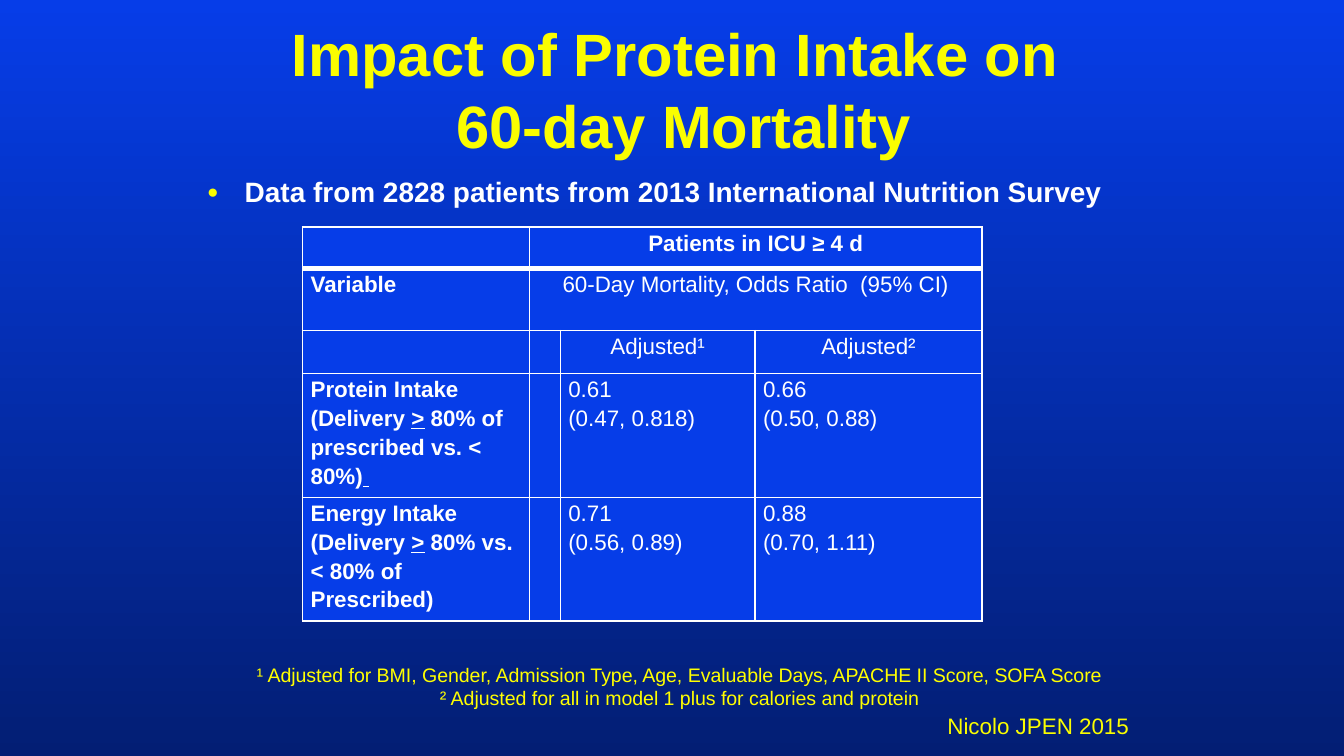
from lxml import etree
from pptx import Presentation
from pptx.dml.color import RGBColor
from pptx.enum.text import MSO_ANCHOR, MSO_AUTO_SIZE, PP_ALIGN
from pptx.oxml.ns import qn
from pptx.util import Cm, Pt

LEFT, CENTER, RIGHT = PP_ALIGN.LEFT, PP_ALIGN.CENTER, PP_ALIGN.RIGHT
MIDDLE, TOP = MSO_ANCHOR.MIDDLE, MSO_ANCHOR.TOP
FIXED, GROW = MSO_AUTO_SIZE.NONE, MSO_AUTO_SIZE.SHAPE_TO_FIT_TEXT
COLORS = {"blue": "063DE8", "navy": "031E74", "gold": "FAFD00",
          "yellow": "FFFF00", "white": "FFFFFF"}
FONT = "Arial"
COLUMNS = [4.29, 0.58, 3.68, 4.29]
ROWS = [0.79, 1.17, 0.81, 2.34, 2.34]
RESULTS = [
    (["Protein Intake (Delivery ", ">", " 80% of prescribed vs. < 80%)", " "],
     ["0.61", "(0.47, 0.818)"], ["0.66", "(0.50, 0.88)"]),
    (["Energy Intake (Delivery ", ">", " 80% vs. < 80% of Prescribed)"],
     ["0.71", "(0.56, 0.89)"], ["0.88", "(0.70, 1.11)"]),
]


def rgb(name):
    """Return a named colour."""
    return RGBColor.from_string(COLORS[name])


def add_span(para, text, size, color, bold=False, underline=None):
    """Add one formatted run."""
    span = para.add_run()
    span.text = text
    font = span.font
    font.name, font.size, font.bold, font.underline = FONT, Pt(size), bold, underline
    font.color.rgb = rgb(color)


def next_para(frame, index):
    """Return the first paragraph, or a new one after it."""
    return frame.paragraphs[0] if index == 0 else frame.add_paragraph()


def place(box, left, top, width, height):
    """Position a shape, in centimetres."""
    box.left, box.top, box.width, box.height = map(Cm, (left, top, width, height))


def paint_background(page):
    """Fill the page with a vertical gradient."""
    fill = page.background.fill
    fill.gradient()
    fill.gradient_angle = 270
    for stop, color, position in zip(fill.gradient_stops, ("blue", "navy"), (0, 1)):
        stop.color.rgb = rgb(color)
        stop.position = position


def fill_title(page):
    """Write the two-line title."""
    title = page.shapes.title
    place(title, 4.11, 0.48, 17.63, 2.39)
    frame = title.text_frame
    frame.auto_size, frame.vertical_anchor = FIXED, MIDDLE
    para = frame.paragraphs[0]
    para.alignment = CENTER
    add_span(para, "Impact of Protein Intake on ", 32, "gold", True)
    para.add_line_break()
    add_span(para, "60-day Mortality", 32, "gold", True)


def fill_body(page):
    """Write the bulleted data source."""
    body = page.placeholders[1]
    place(body, 3.66, 3.18, 18.57, 8.59)
    frame = body.text_frame
    frame.auto_size, frame.vertical_anchor = FIXED, TOP
    para = frame.paragraphs[0]
    para.space_before = Pt(3)
    add_span(para, "Data from 2828 patients from 2013 International Nutrition Survey",
             15, "white", True)
    props = para._p.get_or_add_pPr()
    props.set("marL", str(Cm(0.71)))
    props.set("indent", str(-Cm(0.71)))
    tint = etree.SubElement(props, qn("a:buClr"))
    etree.SubElement(tint, qn("a:srgbClr"), val=COLORS["gold"])
    etree.SubElement(props, qn("a:buSzPct"), val="68000")
    etree.SubElement(props, qn("a:buFont"), typeface=FONT)
    etree.SubElement(props, qn("a:buChar"), char="●")


def format_cell(cell, row):
    """Set margins, borders and fill of a cell."""
    cell.margin_left = cell.margin_right = Cm(0.15)
    cell.margin_top = cell.margin_bottom = 0
    widths = {"L": 1, "R": 1, "T": 3 if row == 1 else 1, "B": 3 if row == 0 else 1}
    props = cell._tc.get_or_add_tcPr()
    for side, width in widths.items():
        line = etree.SubElement(props, qn(f"a:ln{side}"), w=str(Pt(width)))
        solid = etree.SubElement(line, qn("a:solidFill"))
        etree.SubElement(solid, qn("a:srgbClr"), val=COLORS["white"])
    cell.fill.solid()
    cell.fill.fore_color.rgb = rgb("blue")


def write_cell(cell, lines, align=LEFT, bold=False):
    """Write paragraphs, each a list of runs with every second one underlined."""
    for index, spans in enumerate(lines):
        para = next_para(cell.text_frame, index)
        para.alignment, para.line_spacing = align, 1.15
        for order, text in enumerate(spans):
            add_span(para, text, 12, "white", bold, order % 2 == 1)


def add_odds_table(page):
    """Build the table of odds ratios."""
    holder = page.shapes.add_table(len(ROWS), len(COLUMNS), Cm(5.72), Cm(4.29),
                                   Cm(sum(COLUMNS)), Cm(sum(ROWS)))
    table = holder.table
    for column, width in zip(table.columns, COLUMNS):
        column.width = Cm(width)
    for index, (row, height) in enumerate(zip(table.rows, ROWS)):
        row.height = Cm(height)
        for cell in row.cells:
            format_cell(cell, index)
    for row in (0, 1):
        table.cell(row, 1).merge(table.cell(row, 3))
    write_cell(table.cell(0, 1), [["Patients in ICU ≥ 4 d"]], CENTER, True)
    write_cell(table.cell(1, 0), [["Variable"]], bold=True)
    write_cell(table.cell(1, 1), [["60-Day Mortality, Odds Ratio  (95% CI)"]], CENTER)
    for column, heading in enumerate(("Adjusted¹", "Adjusted²"), 2):
        write_cell(table.cell(2, column), [[heading]], CENTER)
    for row, (label, *values) in enumerate(RESULTS, 3):
        write_cell(table.cell(row, 0), [label], bold=True)
        for column, lines in enumerate(values, 2):
            write_cell(table.cell(row, column), [[line] for line in lines])


def add_note(page, area, lines, size, color, align):
    """Add a text box with one paragraph per line."""
    box = page.shapes.add_textbox(*map(Cm, area))
    frame = box.text_frame
    frame.word_wrap, frame.auto_size = True, GROW
    for index, line in enumerate(lines):
        para = next_para(frame, index)
        para.alignment = align
        add_span(para, line, size, color)


def main():
    """Build and save the slide."""
    deck = Presentation()
    deck.slide_width, deck.slide_height = Cm(25.4), Cm(14.29)
    page = deck.slides.add_slide(deck.slide_layouts[1])
    paint_background(page)
    fill_title(page)
    fill_body(page)
    add_odds_table(page)
    add_note(page, (3.96, 12.4, 17.78, 1.6), [
        "¹ Adjusted for BMI, Gender, Admission Type, Age, Evaluable Days, "
        "APACHE II Score, SOFA Score",
        "² Adjusted for all in model 1 plus for calories and protein",
    ], 10.5, "yellow", CENTER)
    add_note(page, (14.76, 13.34, 6.83, 0.76), ["Nicolo JPEN 2015"], 12, "gold", RIGHT)
    deck.save("out.pptx")


if __name__ == "__main__":
    main()
